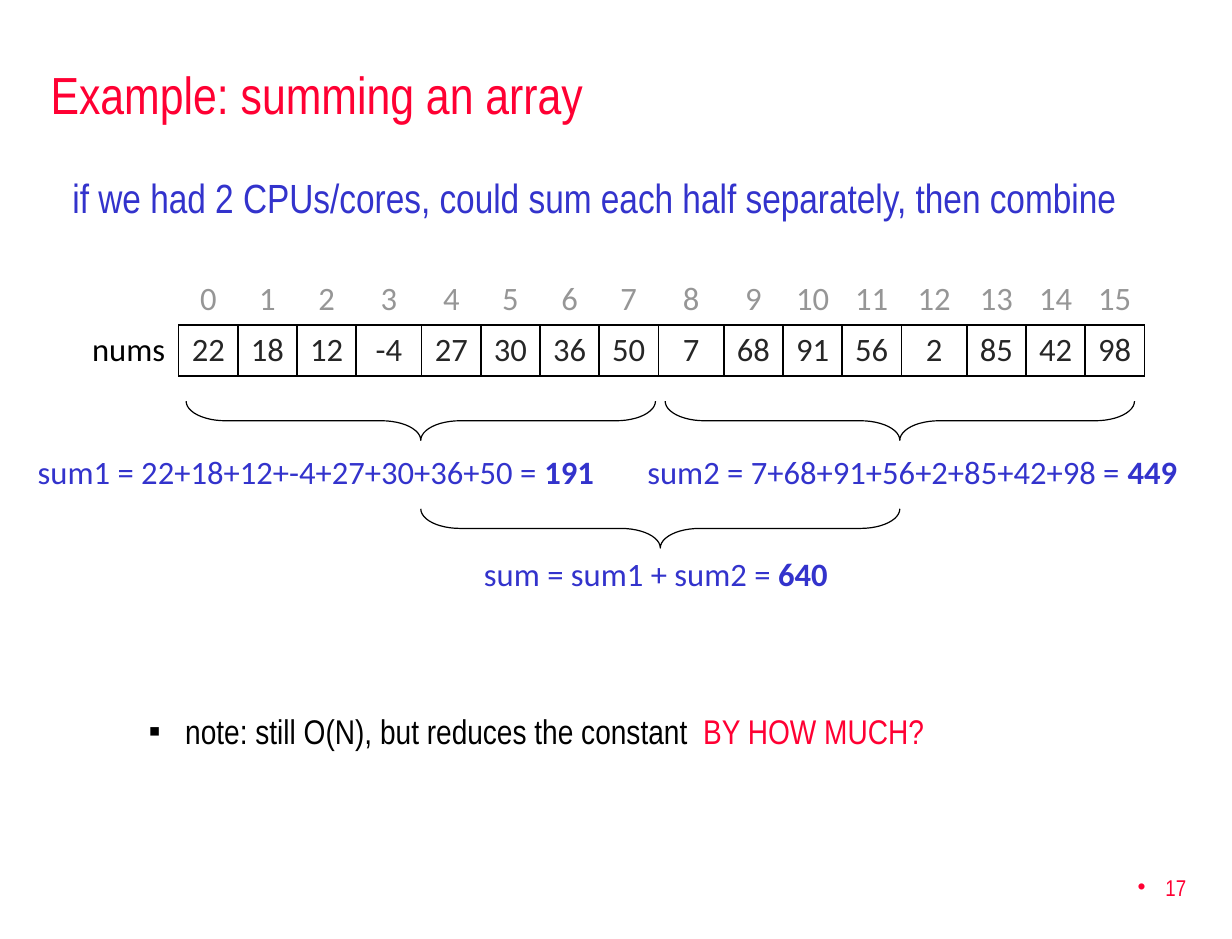
"""Build the slide that sums an array in two halves."""
from dataclasses import dataclass

from lxml import etree
from pptx import Presentation
from pptx.dml.color import RGBColor
from pptx.enum.shapes import MSO_SHAPE
from pptx.enum.text import MSO_ANCHOR, MSO_AUTO_SIZE, PP_ALIGN
from pptx.oxml.ns import qn
from pptx.util import Cm, Pt

BRACE = MSO_SHAPE.LEFT_BRACE
MIDDLE, TOP = MSO_ANCHOR.MIDDLE, MSO_ANCHOR.TOP
FIXED = MSO_AUTO_SIZE.NONE
LEFT, CENTER, RIGHT = PP_ALIGN.LEFT, PP_ALIGN.CENTER, PP_ALIGN.RIGHT


@dataclass(frozen=True)
class Theme:
    """Fonts, type sizes and colours of the slide."""
    head: str = "Arial Narrow"
    body: str = "Calibri"
    title: int = 32
    lead: int = 25
    note: int = 21
    data: int = 20
    page: int = 14
    red: str = "FF0033"
    blue: str = "3333CC"
    black: str = "000000"
    dark: str = "262626"
    grey: str = "969696"


class Deck:
    """Holds the theme and the current slide."""

    def __init__(self, theme, width, height):
        self.theme = theme
        self.show = Presentation()
        self.show.slide_width, self.show.slide_height = Cm(width), Cm(height)
        self.slide = self.show.slides.add_slide(self.show.slide_layouts[5])

    def fill(self, frame, runs, font, size, align=LEFT):
        """Add (text, colour, bold) runs to the first paragraph."""
        para = frame.paragraphs[0]
        para.alignment = align
        for text, color, bold in runs:
            run = para.add_run()
            run.text = text
            run.font.name, run.font.size, run.font.bold = font, Pt(size), bold
            run.font.color.rgb = RGBColor.from_string(color)
        return para

    def title(self, text, box):
        """Place and fill the title placeholder."""
        shape = self.slide.shapes.title
        shape.left, shape.top, shape.width, shape.height = map(Cm, box)
        frame = shape.text_frame
        frame.auto_size, frame.vertical_anchor = FIXED, MIDDLE
        self.fill(frame, [(text, self.theme.red, False)],
                  self.theme.head, self.theme.title)

    def text(self, runs, box, font, size, align=LEFT, anchor=TOP, wrap=True):
        """Add a text box and return its paragraph."""
        frame = self.slide.shapes.add_textbox(*map(Cm, box)).text_frame
        frame.word_wrap, frame.vertical_anchor = wrap, anchor
        return self.fill(frame, runs, font, size, align)

    def bullet(self, para, mark, left, hang):
        """Give a paragraph a bullet and a hanging indent."""
        props = para._p.get_or_add_pPr()
        props.set("marL", str(Cm(left)))
        props.set("indent", str(-Cm(hang)))
        etree.SubElement(props, qn("a:buFont")).set("typeface", "Arial")
        etree.SubElement(props, qn("a:buChar")).set("char", mark)

    def brace(self, mid, top, span, depth):
        """Add a brace that opens upward, centred on mid."""
        shape = self.slide.shapes.add_shape(
            BRACE, Cm(mid - depth / 2), Cm(top + depth / 2 - span / 2),
            Cm(depth), Cm(span))
        shape.rotation = 270
        shape.adjustments[0], shape.adjustments[1] = 1, 0.5
        shape.shadow.inherit = False
        shape.fill.background()
        shape.line.width = Pt(0.75)
        shape.line.color.rgb = RGBColor.from_string(self.theme.black)

    def total(self, label, value, mid, top, width):
        """Add a centred sum with a bold result."""
        blue = self.theme.blue
        self.text([(label, blue, False), (value, blue, True)],
                  (mid - width / 2, top, width, 1.12),
                  self.theme.body, self.theme.data, CENTER, wrap=False)

    def border(self, cell, sides):
        """Draw black lines on the given cell sides."""
        props = cell._tc.get_or_add_tcPr()
        for place, side in enumerate(sides):
            line = etree.Element(qn("a:ln" + side), w=str(Pt(1)))
            paint = etree.SubElement(line, qn("a:solidFill"))
            etree.SubElement(paint, qn("a:srgbClr")).set("val", self.theme.black)
            props.insert(place, line)

    def table(self, label, values, spot, widths, height):
        """Add the array with its indexes above the values."""
        theme = self.theme
        table = self.slide.shapes.add_table(
            2, len(widths), *map(Cm, spot), Cm(sum(widths)), Cm(2 * height)).table
        table.first_row = table.horz_banding = False
        for col, width in zip(table.columns, widths):
            col.width = Cm(width)
        rows = [["", *range(len(values))], [label, *values]]
        for r, row in enumerate(rows):
            table.rows[r].height = Cm(height)
            for c, value in enumerate(row):
                cell = table.cell(r, c)
                cell.fill.background()
                if c:
                    color = theme.dark if r else theme.grey
                    sides = "LRTB" if r else "B"
                else:
                    color, sides = theme.black, "R" if r else ""
                self.border(cell, sides)
                self.fill(cell.text_frame, [(str(value), color, False)],
                          theme.body, theme.data, CENTER)


def main():
    """Lay out the slide and save it."""
    theme = Theme()
    deck = Deck(theme, 26.67, 20.32)
    deck.title("Example: summing an array", (0.84, 1.07, 25.2, 1.9))
    deck.text([("if we had 2 CPUs/cores, could sum each half separately, "
                "then combine", theme.blue, False)],
              (1.32, 3.61, 24.28, 1.5), theme.head, theme.lead)
    page = deck.text([("17", theme.red, False)], (20.37, 18.52, 5.56, 1.35),
                     theme.head, theme.page, RIGHT, MIDDLE)
    deck.bullet(page, "•", 0.6, 0.6)

    nums = [22, 18, 12, -4, 27, 30, 36, 50, 7, 68, 91, 56, 2, 85, 42, 98]
    wide = (3, 8, 12)
    cells = [1.42 if i in wide else 1.28 for i in range(len(nums))]
    deck.table("nums", nums, (1.7, 5.92), [2.17, *cells], 1.11)

    half = len(nums) // 2
    parts = [nums[:half], nums[half:]]
    mids, labels, span = (9.11, 19.48), (6.84, 19.75), 10.16
    for i, (part, mid, spot) in enumerate(zip(parts, mids, labels), 1):
        deck.brace(mid, 8.68, span, 0.85)
        terms = "+".join(map(str, part))
        deck.total(f"sum{i} = {terms} = ", str(sum(part)), spot, 9.65, 12.6)
    deck.brace(sum(mids) / 2, 11.01, mids[1] - mids[0], 0.85)
    deck.total("sum = sum1 + sum2 = ", str(sum(nums)), 14.2, 11.86, 8)

    note = deck.text([("note: still O(N), but reduces the constant  ",
                       theme.black, False), ("BY HOW MUCH?", theme.red, False)],
                     (1.7, 15.24, 24.28, 3.18), theme.head, theme.note)
    deck.bullet(note, "▪", 2.06, 0.79)
    deck.show.save("out.pptx")


if __name__ == "__main__":
    main()
